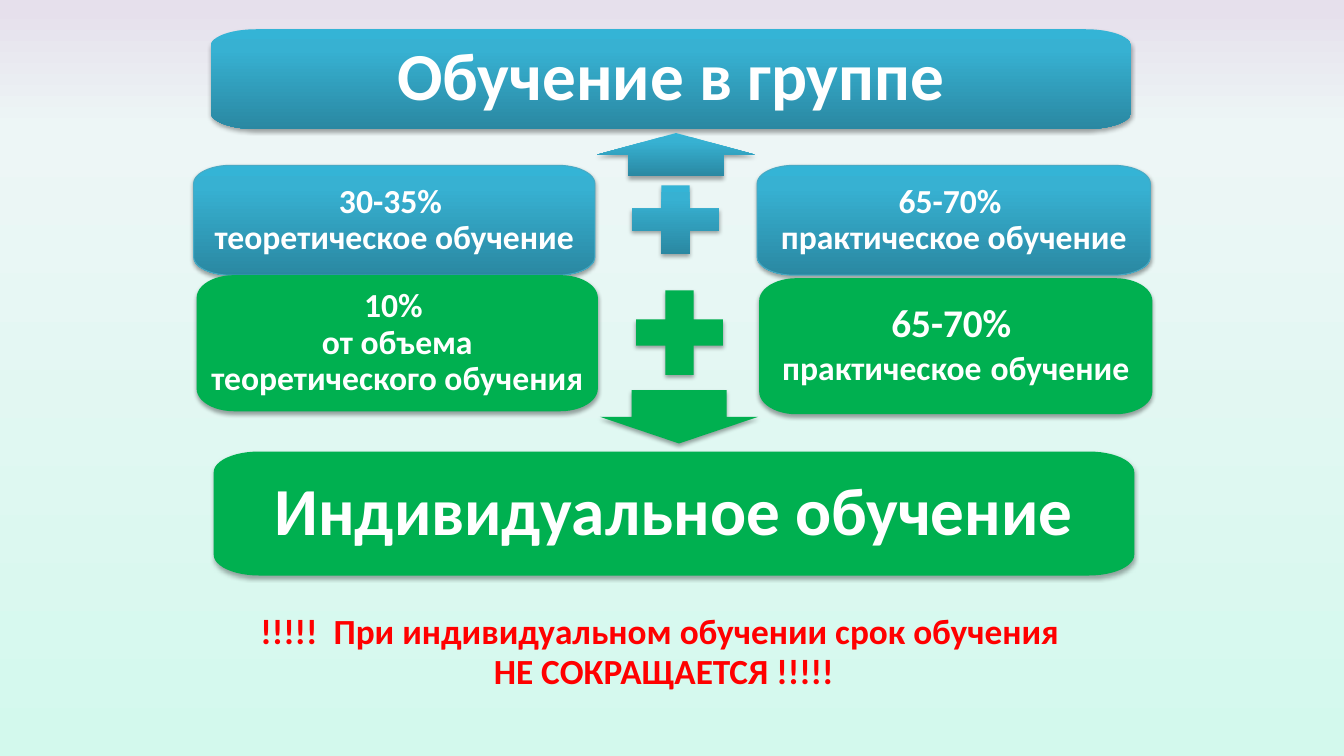
from math import cos, pi, sin
from lxml import etree
from pptx import Presentation
from pptx.dml.color import RGBColor
from pptx.enum import shapes, text
from pptx.oxml.ns import qn
from pptx.util import Inches, Pt

BLUE = [(0, "34B4D6"), (20, "37B1D2"), (100, "2A88A2")]
GREEN = [(0, "00B050")]
SKY = [(1, "E6E0EC"), (17, "EDF6F6"), (100, "D3F9ED")]
hue = RGBColor.from_string


def paint(part, fill, stops):
    """Fill a shape or background with one colour, or top to bottom with several."""
    if len(stops) == 1:
        fill.solid()
        fill.fore_color.rgb = hue(stops[0][1])
        return
    fill.gradient()
    fill.gradient_angle = 270
    band = next(part.element.iter(qn("a:gsLst")))
    for old in list(band):
        band.remove(old)
    for pos, tone in stops:
        stop = etree.SubElement(band, qn("a:gs"), pos=str(pos * 1000))
        etree.SubElement(stop, qn("a:srgbClr"), val=tone)


def write(frame, lines, tone, space, before=0):
    """Each line is a list of (words, size) runs."""
    frame.word_wrap = True
    for i, line in enumerate(lines):
        para = frame.paragraphs[0] if i == 0 else frame.add_paragraph()
        para.alignment = text.PP_ALIGN.CENTER
        para.line_spacing = space
        para.space_before = Pt(before)
        for words, size in line:
            run = para.add_run()
            run.text = words
            run.font.name = "Calibri"
            run.font.size = Pt(size)
            run.font.bold = True
            run.font.color.rgb = hue(tone)


deck = Presentation()
deck.slide_width, deck.slide_height = Inches(13.33), Inches(7.5)
slide = deck.slides.add_slide(deck.slide_layouts[6])
paint(slide, slide.background.fill, SKY)

# Boxes: left, top, width, height, corner width, inset, fill, edge, lines
boxes = [
    (1.92, 1.64, 3.98, 1.09, 0.37, 0.13, BLUE, True,
     [[("30-35% ", 24)], [("теоретическое обучение", 24)]]),
    (7.51, 1.64, 3.9, 1.09, 0.37, 0.13, BLUE, True,
     [[("65-70% ", 24)], [("практическое обучение", 24)]]),
    (2.09, 0.29, 9.13, 0.99, 0.45, 0.16, BLUE, False,
     [[("Обучение в группе", 48)]]),
    (1.95, 2.73, 3.98, 1.35, 0.37, 0.13, GREEN, False,
     [[("10% ", 24)], [("от объема теоретического обучения", 24)]]),
    (7.53, 2.76, 3.9, 1.35, 0.37, 0.13, GREEN, False,
     [[("65-70% ", 28)],
      [("практическое", 24), (" ", 28), ("обучение", 24)]]),
    (2.12, 4.48, 9.13, 1.23, 0.45, 0.16, GREEN, False,
     [[("Индивидуальное обучение", 48)]]),
]
for x, y, w, h, rx, inset, stops, edge, lines in boxes:
    ry = h / 6
    centres = [(x + w - rx, y + h - ry), (x + rx, y + h - ry),
               (x + rx, y + ry), (x + w - rx, y + ry)]
    dots = []
    for turn, (cx, cy) in enumerate(centres):
        for step in range(13):
            arc = (turn + step / 12) * pi / 2
            dots.append((Inches(cx + rx * cos(arc)), Inches(cy + ry * sin(arc))))
    path = slide.shapes.build_freeform(*dots[0])
    path.add_line_segments(dots[1:])
    box = path.convert_to_shape()
    paint(box, box.fill, stops)
    if edge:
        box.line.color.rgb = hue("46AAC5")
        box.line.width = Pt(0.75)
    else:
        box.line.fill.background()
    frame = box.text_frame
    frame.margin_left = frame.margin_right = Inches(inset)
    frame.margin_top = frame.margin_bottom = Inches(inset)
    frame.vertical_anchor = text.MSO_ANCHOR.MIDDLE
    write(frame, lines, "FFFFFF", 0.9)

# Plus signs: centre, half length and half bar across and down
for cx, cy, a, b, p, q, stops in [
    (6.7, 2.18, 0.43, 0.34, 0.14, 0.11, BLUE),
    (6.74, 3.3, 0.43, 0.42, 0.14, 0.13, GREEN),
]:
    dots = [(-p, -b), (p, -b), (p, -q), (a, -q), (a, q), (p, q),
            (p, b), (-p, b), (-p, q), (-a, q), (-a, -q), (-p, -q)]
    dots = [(Inches(cx + dx), Inches(cy + dy)) for dx, dy in dots]
    path = slide.shapes.build_freeform(*dots[0])
    path.add_line_segments(dots[1:])
    plus = path.convert_to_shape()
    paint(plus, plus.fill, stops)
    plus.line.fill.background()

kinds = shapes.MSO_SHAPE
for kind, x, y, h, stops in [
    (kinds.UP_ARROW, 5.92, 1.32, 0.43, BLUE),
    (kinds.DOWN_ARROW, 5.95, 3.87, 0.53, GREEN),
]:
    arrow = slide.shapes.add_shape(
        kind, Inches(x), Inches(y), Inches(1.57), Inches(h))
    arrow.adjustments[0] = 0.6
    arrow.adjustments[1] = 0.5
    paint(arrow, arrow.fill, stops)
    arrow.line.fill.background()

for shape in slide.shapes:
    shape.shadow.inherit = False
    glow = etree.SubElement(
        next(shape.element.iter(qn("a:effectLst"))), qn("a:outerShdw"),
        blurRad=str(Pt(3.1)), dist=str(Pt(1.8)), dir="5400000", rotWithShape="0")
    black = etree.SubElement(glow, qn("a:srgbClr"), val="000000")
    etree.SubElement(black, qn("a:alpha"), val="35000")

note = slide.shapes.add_textbox(
    Inches(1.86), Inches(6.11), Inches(9.45), Inches(0.81))
write(note.text_frame,
      [[("!!!!!  При индивидуальном обучении срок обучения ", 25.2)],
       [("НЕ СОКРАЩАЕТСЯ !!!!!", 25.2)]], "FF0000", 0.7, 7.5)

deck.save("out.pptx")
